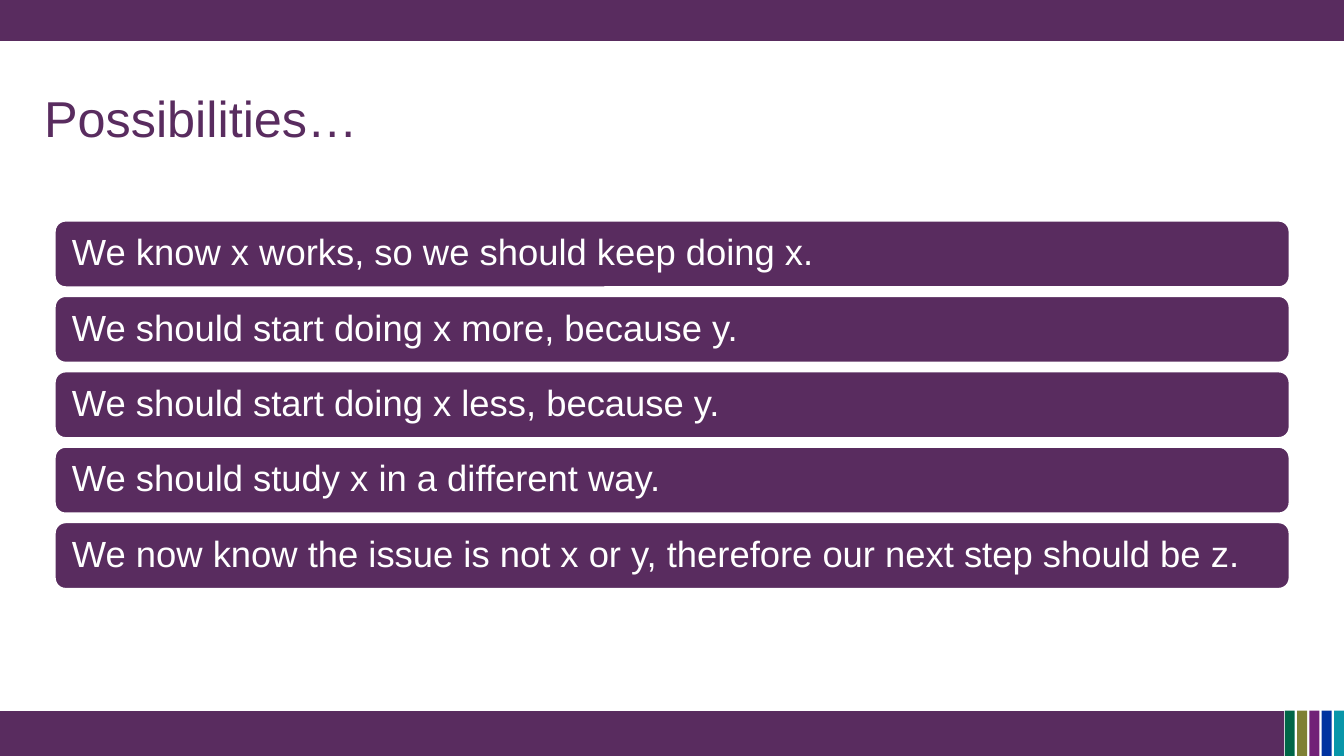
from pptx import Presentation
from pptx.dml.color import RGBColor
from pptx.enum.shapes import MSO_SHAPE
from pptx.enum.text import MSO_ANCHOR, PP_ALIGN
from pptx.util import Cm, Pt

PURPLE = "592C5F"
WHITE = "FFFFFF"
STRIPE_COLORS = ["006647", "7E8034", "712177", "0033A0", "0996A9"]
POSSIBILITIES = [
    "We know x works, so we should keep doing x.",
    "We should start doing x more, because y.",
    "We should start doing x less, because y.",
    "We should study x in a different way.",
    "We now know the issue is not x or y, therefore our next step should be z.",
]


def color(hex_string):
    return RGBColor.from_string(hex_string)


def write_text(shape, text, size=26, text_color=WHITE, inset=0.36,
               line_spacing=0.9):
    frame = shape.text_frame
    frame.word_wrap = True
    frame.vertical_anchor = MSO_ANCHOR.MIDDLE
    frame.margin_left = frame.margin_right = Cm(inset)
    paragraph = frame.paragraphs[0]
    paragraph.alignment = PP_ALIGN.LEFT
    paragraph.line_spacing = line_spacing
    run = paragraph.add_run()
    run.text = text
    run.font.name = "Arial"
    run.font.size = Pt(size)
    run.font.color.rgb = color(text_color)


def add_block(slide, left, top, width, height, fill,
              kind=MSO_SHAPE.RECTANGLE, outline=None):
    shape = slide.shapes.add_shape(kind, Cm(left), Cm(top), Cm(width), Cm(height))
    shape.shadow.inherit = False
    shape.fill.solid()
    shape.fill.fore_color.rgb = color(fill)
    if outline:
        shape.line.color.rgb = color(outline)
        shape.line.width = Pt(2)
    else:
        shape.line.fill.background()
    return shape


def add_bands(slide):
    add_block(slide, 0, 0, 33.87, 1.03, PURPLE)
    add_block(slide, 0, 17.92, 32.36, 1.13, PURPLE)
    for index, stripe_color in enumerate(STRIPE_COLORS):
        add_block(slide, 32.38 + index * 0.31, 17.91, 0.25, 1.14, stripe_color)


def set_title(slide, text):
    title = slide.shapes.title
    title.left, title.top = Cm(0.86), Cm(2.11)
    title.width, title.height = Cm(19.86), Cm(1.68)
    write_text(title, text, size=36, text_color=PURPLE, inset=0.25,
               line_spacing=1.0)


def add_possibilities(slide):
    for index, text in enumerate(POSSIBILITIES):
        bar = add_block(slide, 1.37, 5.55 + index * 1.9, 31.14, 1.7, PURPLE,
                        kind=MSO_SHAPE.ROUNDED_RECTANGLE, outline=WHITE)
        write_text(bar, text)


def main():
    presentation = Presentation()
    presentation.slide_width = Cm(33.87)
    presentation.slide_height = Cm(19.05)
    # Title-only layout
    slide = presentation.slides.add_slide(presentation.slide_layouts[5])
    # Frame bands, heading and list of bars
    add_bands(slide)
    set_title(slide, "Possibilities…")
    add_possibilities(slide)
    presentation.save("out.pptx")


if __name__ == "__main__":
    main()
